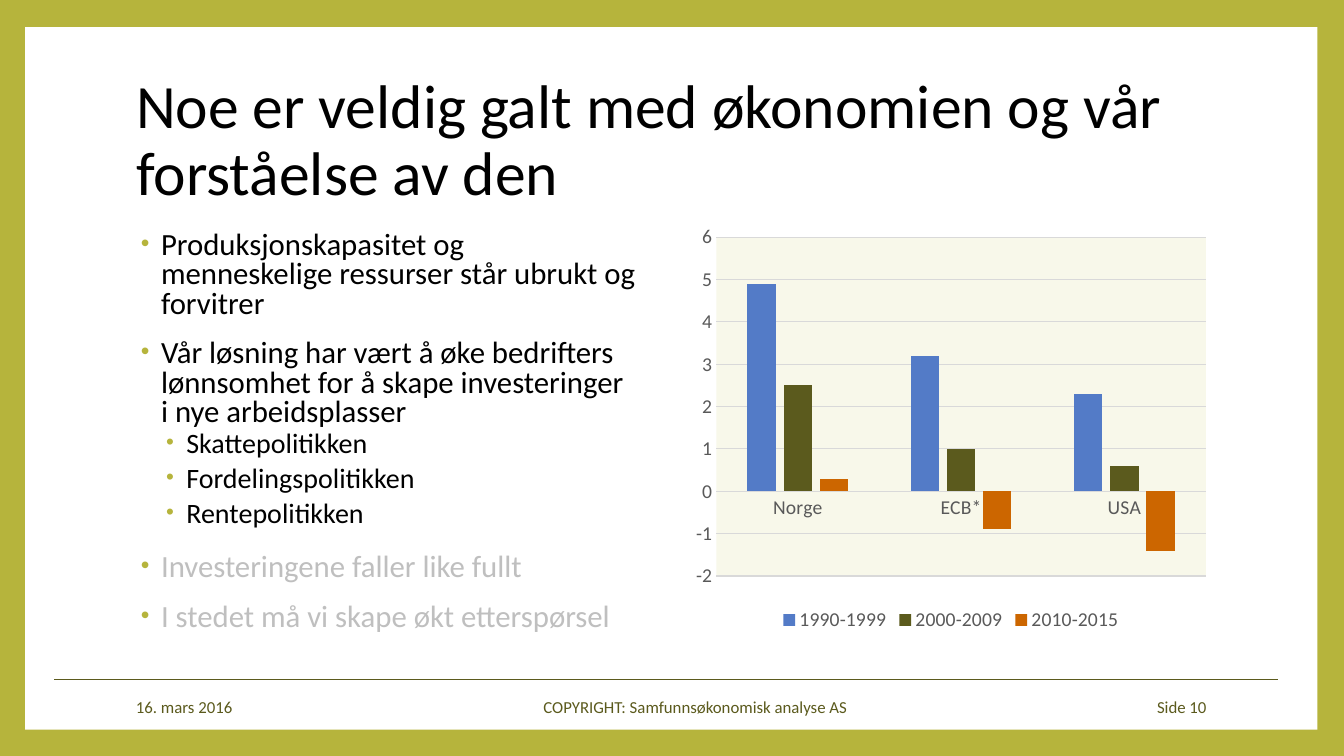
from dataclasses import dataclass

from lxml.etree import SubElement
from pptx import Presentation
from pptx.chart.data import CategoryChartData
from pptx.dml.color import RGBColor
from pptx.enum.chart import XL_CHART_TYPE, XL_LEGEND_POSITION, XL_TICK_LABEL_POSITION, XL_TICK_MARK
from pptx.enum.shapes import MSO_CONNECTOR, MSO_SHAPE
from pptx.enum.text import MSO_ANCHOR, MSO_AUTO_SIZE, PP_ALIGN
from pptx.oxml.ns import qn
from pptx.util import Pt


@dataclass(frozen=True)
class Theme:
    face: str = "Calibri"
    lime: str = "B6B43C"
    olive: str = "5B5A1D"
    blue: str = "537BC7"
    rust: str = "CC6600"
    cream: str = "F8F8EA"
    white: str = "FFFFFF"
    ink: str = "000000"
    pale: str = "BFBFBF"
    label: str = "595959"
    grid: str = "D9D9D9"
    head: int = 44
    body: int = 22
    sub: int = 20
    chart: int = 14
    foot: int = 12


def rgb(code):
    return RGBColor.from_string(code)


def paint(fill, code):
    fill.solid()
    fill.fore_color.rgb = rgb(code)


class Page:
    def __init__(self, deck, theme):
        self.theme = theme
        self.slide = deck.slides.add_slide(deck.slide_layouts[5])
        self.shapes = self.slide.shapes
        paint(self.slide.background.fill, theme.lime)

    def style(self, font, size, code):
        font.name = self.theme.face
        font.size = Pt(size)
        font.color.rgb = rgb(code)

    def frame(self, box, anchor):
        frame = box.text_frame
        frame.word_wrap = True
        frame.auto_size = MSO_AUTO_SIZE.NONE
        frame.vertical_anchor = anchor
        return frame

    def panel(self, *place):
        box = self.shapes.add_shape(MSO_SHAPE.RECTANGLE, *map(Pt, place))
        box.shadow.inherit = False
        paint(box.fill, self.theme.white)
        box.line.fill.background()

    def rule(self, left, right, top):
        line = self.shapes.add_connector(MSO_CONNECTOR.STRAIGHT, Pt(left), Pt(top), Pt(right), Pt(top))
        line.line.color.rgb = rgb(self.theme.olive)
        line.line.width = Pt(0.5)
        SubElement(line._element.spPr, qn("a:effectLst"))

    def title(self, text, *place):
        box = self.shapes.title
        self.shapes._spTree.append(box._element)
        box.left, box.top, box.width, box.height = map(Pt, place)
        frame = self.frame(box, MSO_ANCHOR.MIDDLE)
        frame.text = text
        para = frame.paragraphs[0]
        para.alignment = PP_ALIGN.LEFT
        para.line_spacing = 0.9
        self.style(para.font, self.theme.head, self.theme.ink)

    def label(self, text, align, *place):
        box = self.shapes.add_textbox(*map(Pt, place))
        frame = self.frame(box, MSO_ANCHOR.MIDDLE)
        frame.text = text
        para = frame.paragraphs[0]
        para.alignment = align
        self.style(para.font, self.theme.foot, self.theme.olive)

    def bullet(self, para, level):
        props = para._p.get_or_add_pPr()
        props.set("marL", str(Pt(18 * (level + 1))))
        props.set("indent", str(-Pt(14.4)))
        tint = SubElement(props, qn("a:buClr"))
        SubElement(tint, qn("a:srgbClr"), val=self.theme.lime)
        SubElement(props, qn("a:buSzPct"), val="80000")
        SubElement(props, qn("a:buFont"), typeface="Arial")
        SubElement(props, qn("a:buChar"), char="•")

    def points(self, items, *place):
        box = self.shapes.add_textbox(*map(Pt, place))
        frame = self.frame(box, MSO_ANCHOR.TOP)
        for index, (level, code, text) in enumerate(items):
            para = frame.paragraphs[0] if index == 0 else frame.add_paragraph()
            para.text = text
            para.level = level
            para.line_spacing = 0.8
            para.space_before = Pt(0 if index == 0 else 2 if level else 14)
            para.space_after = Pt(4 if level else 0)
            self.bullet(para, level)
            self.style(para.font, self.theme.sub if level else self.theme.body, code)

    def columns(self, names, series, *place):
        theme = self.theme
        data = CategoryChartData()
        data.categories = names
        for name, _, values in series:
            data.add_series(name, values)
        kind = XL_CHART_TYPE.COLUMN_CLUSTERED
        chart = self.shapes.add_chart(kind, *map(Pt, place), data).chart
        self.style(chart.font, theme.chart, theme.label)
        chart.has_title = False
        chart.has_legend = True
        chart.legend.position = XL_LEGEND_POSITION.BOTTOM
        chart.legend.include_in_layout = False
        self.style(chart.legend.font, theme.chart, theme.label)

        plot = chart.plots[0]
        plot.gap_width = 219
        plot.overlap = -27
        plot.vary_by_categories = False
        for bars, (_, code, _) in zip(plot.series, series):
            paint(bars.format.fill, code)
            bars.invert_if_negative = False

        cats, vals = chart.category_axis, chart.value_axis
        for axis in (cats, vals):
            axis.major_tick_mark = axis.minor_tick_mark = XL_TICK_MARK.NONE
            axis.tick_label_position = XL_TICK_LABEL_POSITION.NEXT_TO_AXIS
            self.style(axis.tick_labels.font, theme.chart, theme.label)
        vals.minimum_scale, vals.maximum_scale, vals.major_unit = -2, 6, 1
        vals.format.line.fill.background()
        for line in (cats.format.line, vals.major_gridlines.format.line):
            line.color.rgb = rgb(theme.grid)
            line.width = Pt(0.75)

        area = chart._chartSpace.chart.plotArea
        fill = SubElement(SubElement(area, qn("c:spPr")), qn("a:solidFill"))
        SubElement(fill, qn("a:srgbClr"), val=theme.cream)


def main():
    deck = Presentation()
    deck.slide_width, deck.slide_height = Pt(960), Pt(540)
    theme = Theme()
    page = Page(deck, theme)
    page.panel(18, 19.4, 923, 501.8)
    page.rule(38.9, 913, 485.3)
    page.title("Noe er veldig galt med økonomien og vår forståelse av den", 90, 48.2, 788.4, 106.6)
    page.points([
        (0, theme.ink, "Produksjonskapasitet og menneskelige ressurser står ubrukt og forvitrer"),
        (0, theme.ink, "Vår løsning har vært å øke bedrifters lønnsomhet for å skape investeringer i nye arbeidsplasser"),
        (1, theme.ink, "Skattepolitikken"),
        (1, theme.ink, "Fordelingspolitikken"),
        (1, theme.ink, "Rentepolitikken"),
        (0, theme.pale, "Investeringene faller like fullt"),
        (0, theme.pale, "I stedet må vi skape økt etterspørsel"),
    ], 90, 162, 371.5, 318.2)
    for text, align, left, width in (
        ("16. mars 2016", PP_ALIGN.LEFT, 90, 183.6),
        ("COPYRIGHT: Samfunnsøkonomisk analyse AS", PP_ALIGN.CENTER, 311, 371.5),
        ("Side 10", PP_ALIGN.RIGHT, 734.4, 134.6),
    ):
        page.label(text, align, left, 490.3, width, 28.8)
    page.columns(["Norge", "ECB*", "USA"], [
        ("1990-1999", theme.blue, (4.9, 3.2, 2.3)),
        ("2000-2009", theme.olive, (2.5, 1, 0.6)),
        ("2010-2015", theme.rust, (0.3, -0.9, -1.4)),
    ], 489.6, 154.8, 379.4, 299.5)
    deck.save("out.pptx")


if __name__ == "__main__":
    main()
